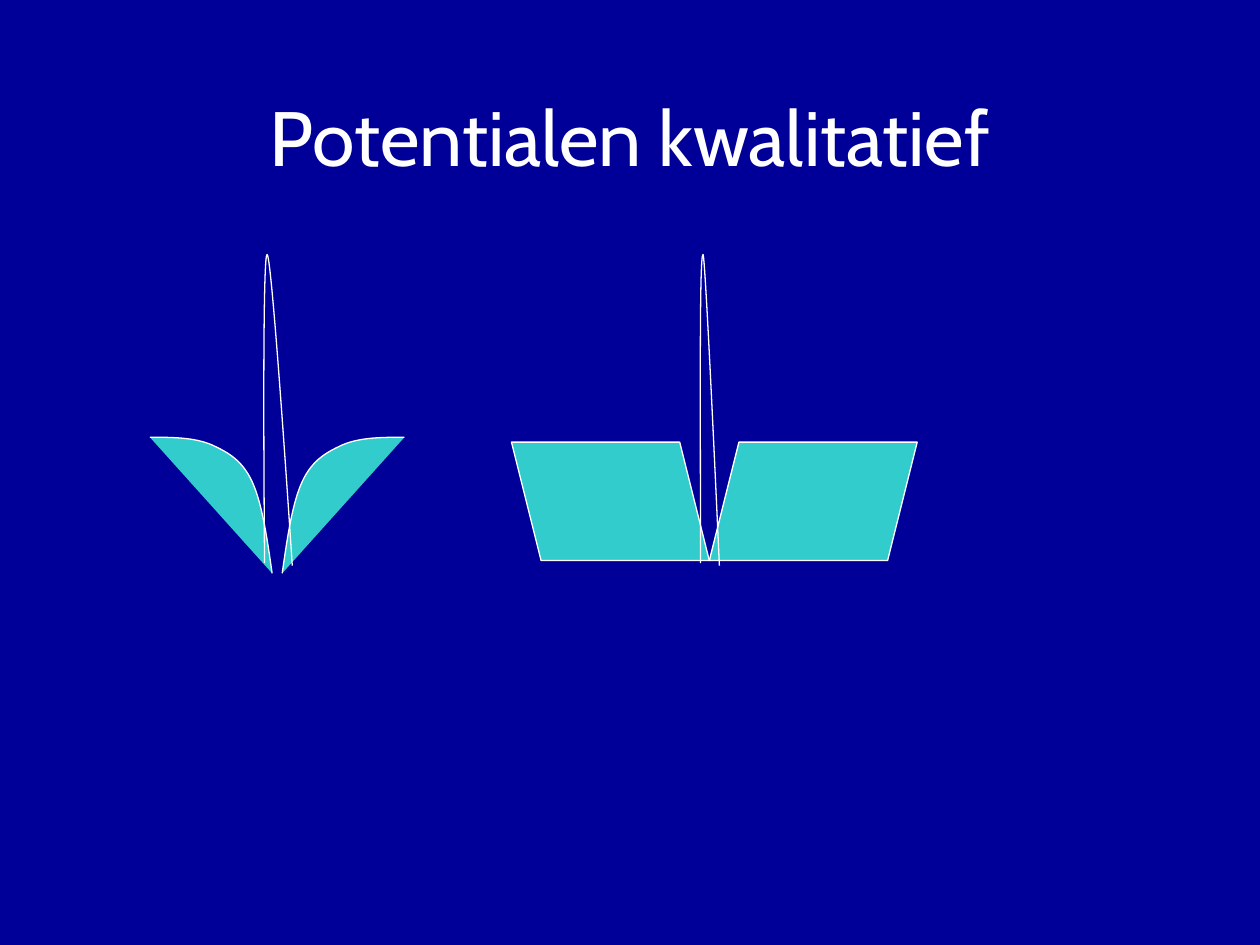
from lxml.etree import SubElement
from pptx import Presentation
from pptx.dml.color import RGBColor
from pptx.enum.shapes import MSO_SHAPE as Shape
from pptx.enum.text import MSO_ANCHOR as Anchor, PP_ALIGN as Align
from pptx.oxml.ns import qn
from pptx.util import Inches, Pt

NAVY, TEAL, WHITE = "000099", "33CCCC", "FFFFFF"
TITLE = "Potentialen kwalitatief"

# Each curve: a start point, then three control points per cubic segment
WELL_AXIS = 2.2
WELL_LEFT = [(1.19, 3.47),
             (1.36, 3.47), (1.54, 3.47), (1.68, 3.53),
             (1.81, 3.59), (1.92, 3.65), (2.00, 3.82),
             (2.08, 3.99), (2.12, 4.27), (2.16, 4.55)]
WELL_RIGHT = [(2 * WELL_AXIS - x, y) for x, y in WELL_LEFT]
PEAKS = [
    [(2.10, 4.47), (2.09, 3.24), (2.09, 2.02), (2.12, 2.02),
     (2.16, 2.02), (2.32, 4.49), (2.32, 4.49)],
    [(5.56, 4.47), (5.56, 3.24), (5.55, 2.02), (5.58, 2.02),
     (5.60, 2.02), (5.71, 4.49), (5.71, 4.49)],
]

# Blocks meet at the foot of the notch: left, width, flips
BLOCK_TOP, BLOCK_HEIGHT = 3.51, 0.94
BLOCKS = [(4.06, 1.57, ["flipV"]), (5.63, 1.65, ["flipH", "flipV"])]


def color(hex_text):
    return RGBColor.from_string(hex_text)


def style(shape, fill=None):
    shape.shadow.inherit = False
    if fill:
        shape.fill.solid()
        shape.fill.fore_color.rgb = color(fill)
    else:
        shape.fill.background()
    shape.line.color.rgb = color(WHITE)
    shape.line.width = Pt(0.75)


def add_curve(slide, controls, fill=None):
    """Draw the control points as lines, then join every three into a cubic."""
    start, *rest = [(Inches(x), Inches(y)) for x, y in controls]
    builder = slide.shapes.build_freeform(*start)
    builder.add_line_segments(rest, close=False)
    shape = builder.convert_to_shape()
    lines = shape._element.xpath(".//a:lnTo")
    outline = lines[0].getparent()
    for first in range(0, len(lines), 3):
        cubic = SubElement(outline, qn("a:cubicBezTo"))
        for line in lines[first:first + 3]:
            cubic.append(line[0])
            outline.remove(line)
    style(shape, fill)


def add_block(slide, left, width, flips):
    block = slide.shapes.add_shape(
        Shape.PARALLELOGRAM, Inches(left), Inches(BLOCK_TOP),
        Inches(width), Inches(BLOCK_HEIGHT))
    style(block, TEAL)
    for flip in flips:
        block._element.spPr.xfrm.set(flip, "1")


def set_title(slide):
    title = slide.shapes.title
    title.left, title.top = Inches(0.5), Inches(0.32)
    title.width, title.height = Inches(9), Inches(1.51)
    frame = title.text_frame
    frame.text = TITLE
    frame.vertical_anchor = Anchor.MIDDLE
    para = frame.paragraphs[0]
    para.alignment = Align.CENTER
    font = para.runs[0].font
    font.name, font.size = "Cabin", Pt(44)
    font.color.rgb = color(WHITE)


def main():
    deck = Presentation()
    deck.slide_width, deck.slide_height = Inches(10), Inches(7.5)
    slide = deck.slides.add_slide(deck.slide_layouts[5])
    slide.background.fill.solid()
    slide.background.fill.fore_color.rgb = color(NAVY)
    set_title(slide)
    for well in (WELL_LEFT, WELL_RIGHT):
        add_curve(slide, well, TEAL)
    for block in BLOCKS:
        add_block(slide, *block)
    for peak in PEAKS:
        add_curve(slide, peak)
    deck.save("out.pptx")


if __name__ == "__main__":
    main()
